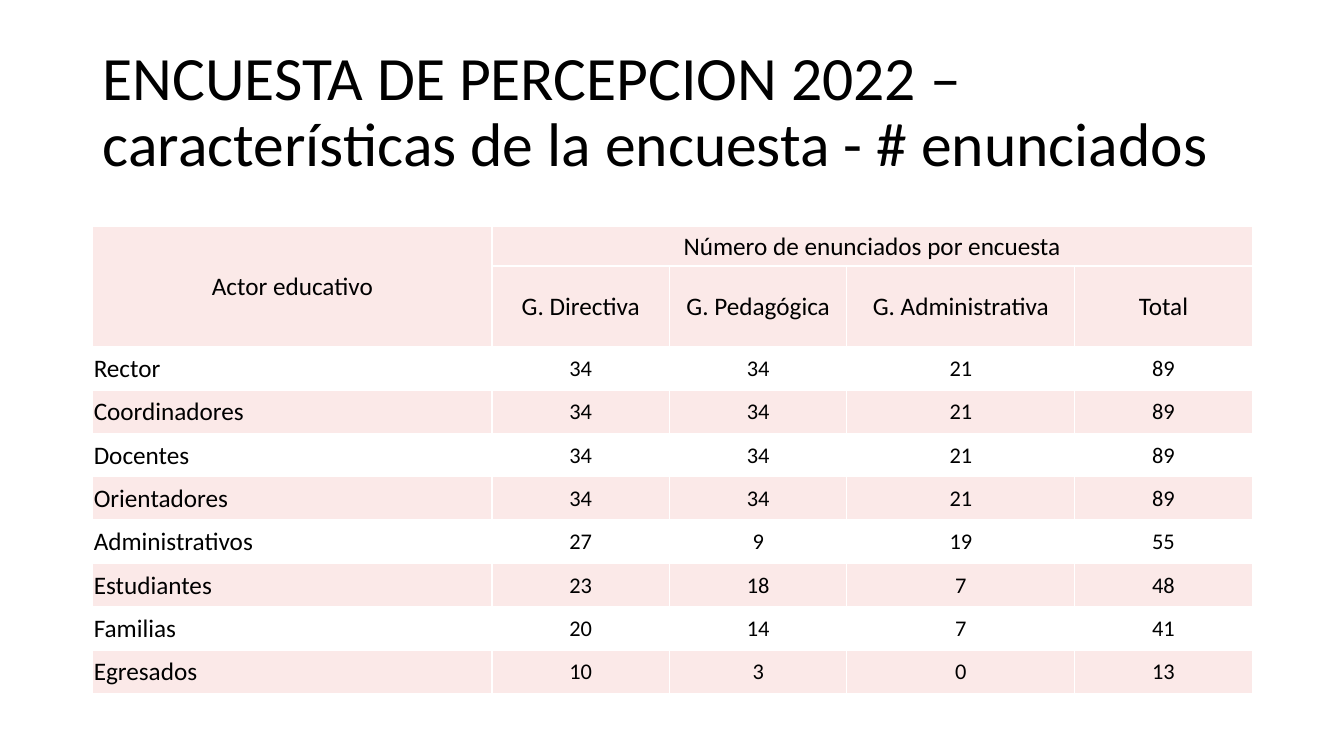
from lxml import etree
from pptx import Presentation
from pptx.dml.color import RGBColor
from pptx.enum import text
from pptx.oxml import ns
from pptx.util import Inches, Pt

BLACK = RGBColor(0x00, 0x00, 0x00)
WHITE = RGBColor(0xFF, 0xFF, 0xFF)
PINK = RGBColor(0xFB, 0xE9, 0xE8)
FONT = "Calibri"

TITLE = "ENCUESTA DE PERCEPCION 2022 – características de la encuesta - # enunciados"
HEADINGS = [
    ["Actor educativo", "Número de enunciados por encuesta", "", "", ""],
    ["", "G. Directiva", "G. Pedagógica", "G. Administrativa", "Total"],
]
STATEMENTS = [
    ["Rector", 34, 34, 21, 89],
    ["Coordinadores", 34, 34, 21, 89],
    ["Docentes", 34, 34, 21, 89],
    ["Orientadores", 34, 34, 21, 89],
    ["Administrativos", 27, 9, 19, 55],
    ["Estudiantes", 23, 18, 7, 48],
    ["Familias", 20, 14, 7, 41],
    ["Egresados", 10, 3, 0, 13],
]
COLUMN_SHARES = [3.96, 1.76, 1.76, 2.26, 1.76]
ROW_SHARES = [0.39, 0.8] + [0.43] * len(STATEMENTS)


def write(frame, wording, size=18, align=text.PP_ALIGN.LEFT, spacing=1.0):
    """Write one formatted paragraph, vertically centred, into a text frame."""
    frame.word_wrap = True
    frame.vertical_anchor = text.MSO_ANCHOR.MIDDLE
    paragraph = frame.paragraphs[0]
    paragraph.alignment = align
    paragraph.line_spacing = spacing
    run = paragraph.add_run()
    run.text = wording
    run.font.size = Pt(size)
    run.font.name = FONT
    run.font.color.rgb = BLACK


def add_borders(cell, color=WHITE, width=1):
    """Draw a solid border on the four sides of a cell."""
    properties = cell._tc.get_or_add_tcPr()
    for side in ("a:lnL", "a:lnR", "a:lnT", "a:lnB"):
        border = etree.SubElement(properties, ns.qn(side), w=str(Pt(width)))
        fill = etree.SubElement(border, ns.qn("a:solidFill"))
        etree.SubElement(fill, ns.qn("a:srgbClr"), val=str(color))


def format_cell(cell, wording, fill, size, align):
    """Give a cell its borders, fill, margins and text."""
    add_borders(cell)
    cell.fill.solid()
    cell.fill.fore_color.rgb = fill
    cell.margin_left = cell.margin_right = cell.margin_top = Inches(0.01)
    cell.margin_bottom = 0
    if wording:
        write(cell.text_frame, wording, size=size, align=align)
        cell.vertical_anchor = text.MSO_ANCHOR.MIDDLE


def place_title(slide, left, top, width, height):
    """Move the title placeholder into its box and fill it."""
    title = slide.shapes.title
    title.left, title.top = Inches(left), Inches(top)
    title.width, title.height = Inches(width), Inches(height)
    write(title.text_frame, TITLE, size=44, spacing=0.9)


def place_survey_table(slide, left, top, width, height):
    """Build the table of statements per survey inside its box."""
    contents = HEADINGS + STATEMENTS
    table = slide.shapes.add_table(
        len(contents), len(COLUMN_SHARES),
        Inches(left), Inches(top), Inches(width), Inches(height),
    ).table
    for column, share in zip(table.columns, COLUMN_SHARES):
        column.width = Inches(width * share / sum(COLUMN_SHARES))
    for row, share in zip(table.rows, ROW_SHARES):
        row.height = Inches(height * share / sum(ROW_SHARES))
    for r, entries in enumerate(contents):
        heading = r < len(HEADINGS)
        fill = PINK if heading or r % 2 else WHITE
        for c, entry in enumerate(entries):
            actor = c == 0 and not heading
            size = 18 if heading or actor else 16
            align = text.PP_ALIGN.LEFT if actor else text.PP_ALIGN.CENTER
            format_cell(table.cell(r, c), str(entry), fill, size, align)
    table.cell(0, 0).merge(table.cell(1, 0))
    table.cell(0, 1).merge(table.cell(0, 4))


def main():
    """Build the survey slide and save it."""
    deck = Presentation()
    deck.slide_width, deck.slide_height = Inches(13.33), Inches(7.5)
    slide = deck.slides.add_slide(deck.slide_layouts[5])
    place_title(slide, 0.92, 0.4, 11.5, 1.45)
    place_survey_table(slide, 0.92, 2.25, 11.5, 4.63)
    deck.save("out.pptx")


if __name__ == "__main__":
    main()
